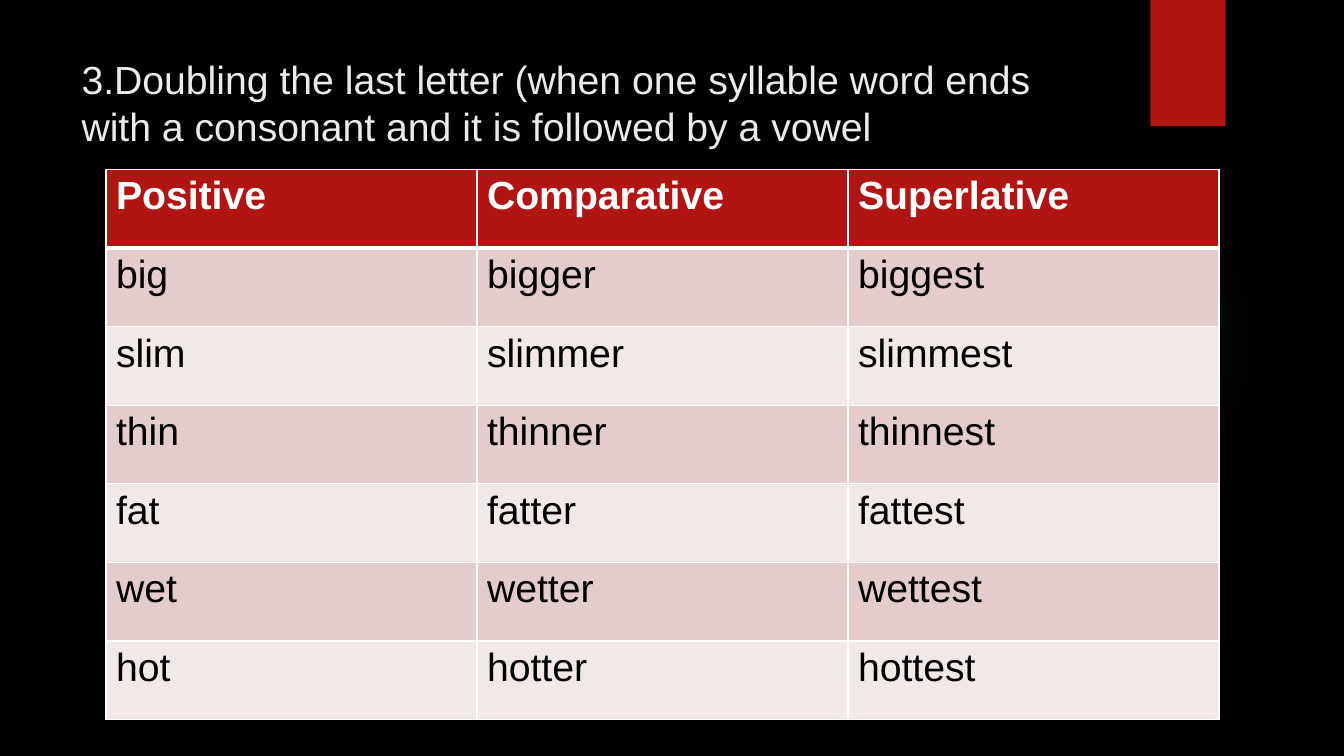
from lxml import etree
from pptx import Presentation
from pptx.dml.color import RGBColor
from pptx.enum.shapes import MSO_SHAPE
from pptx.enum.text import MSO_ANCHOR, MSO_AUTO_SIZE, PP_ALIGN
from pptx.oxml import parse_xml
from pptx.oxml.ns import nsdecls, qn
from pptx.util import Cm, Pt

TITLE = ("3.Doubling the last letter (when one syllable word ends "
         "with a consonant and it is followed by a vowel")
DEGREES = [
    ("Positive", "Comparative", "Superlative"),
    ("big", "bigger", "biggest"),
    ("slim", "slimmer", "slimmest"),
    ("thin", "thinner", "thinnest"),
    ("fat", "fatter", "fattest"),
    ("wet", "wetter", "wettest"),
    ("hot", "hotter", "hottest"),
]
GLOW_STOPS = [(0, 7), (36, 6), (69, 0)]

BLACK = RGBColor(0x00, 0x00, 0x00)
WHITE = RGBColor(0xFF, 0xFF, 0xFF)
RED = RGBColor(0xB0, 0x15, 0x13)
TITLE_GREY = RGBColor(0xEB, 0xEB, 0xEB)
DARK_BAND = RGBColor(0xE4, 0xCC, 0xCC)
LIGHT_BAND = RGBColor(0xF2, 0xE8, 0xE7)
GLOW = RGBColor(0x50, 0xB9, 0xC1)

FONT = "Arial"
TEXT_SIZE = Pt(28)
COLUMN_WIDTH = Cm(9.35)
ROW_HEIGHT = Cm(1.98)
RECTANGLE = MSO_SHAPE.RECTANGLE
OVAL = MSO_SHAPE.OVAL
TOP = MSO_ANCHOR.TOP
NO_AUTOFIT = MSO_AUTO_SIZE.NONE
LEFT = PP_ALIGN.LEFT


def add_plain_shape(slide, kind, left, top, width, height, color):
    shape = slide.shapes.add_shape(kind, Cm(left), Cm(top), Cm(width), Cm(height))
    shape.shadow.inherit = False
    shape.fill.solid()
    shape.fill.fore_color.rgb = color
    shape.line.fill.background()
    return shape


def make_glow(shape):
    stops = "".join(
        f'<a:gs pos="{position * 1000}"><a:srgbClr val="{GLOW}">'
        f'<a:alpha val="{alpha * 1000}"/></a:srgbClr></a:gs>'
        for position, alpha in GLOW_STOPS)
    gradient = parse_xml(
        f'<a:gradFill {nsdecls("a")}><a:gsLst>{stops}</a:gsLst><a:path path="circle">'
        '<a:fillToRect l="50000" t="50000" r="50000" b="50000"/></a:path></a:gradFill>')
    properties = shape.element.spPr
    properties.replace(properties.find(qn("a:solidFill")), gradient)


def format_text(paragraph, color, bold=False):
    paragraph.alignment = LEFT
    paragraph.font.name = FONT
    paragraph.font.size = TEXT_SIZE
    paragraph.font.bold = bold
    paragraph.font.color.rgb = color


def set_borders(cell, top_width, bottom_width):
    properties = cell._tc.get_or_add_tcPr()
    widths = {"a:lnL": 1, "a:lnR": 1, "a:lnT": top_width, "a:lnB": bottom_width}
    for side, width in widths.items():
        line = etree.SubElement(properties, qn(side), w=str(Pt(width)))
        fill = etree.SubElement(line, qn("a:solidFill"))
        etree.SubElement(fill, qn("a:srgbClr"), val=str(WHITE))


def add_degrees_table(slide):
    row_count, column_count = len(DEGREES), len(DEGREES[0])
    table = slide.shapes.add_table(
        row_count, column_count, Cm(2.67), Cm(4.27),
        COLUMN_WIDTH * column_count, ROW_HEIGHT * row_count).table
    for column in table.columns:
        column.width = COLUMN_WIDTH
    for row_index, words in enumerate(DEGREES):
        table.rows[row_index].height = ROW_HEIGHT
        header = row_index == 0
        band = RED if header else DARK_BAND if row_index % 2 else LIGHT_BAND
        for column_index, word in enumerate(words):
            cell = table.cell(row_index, column_index)
            cell.text = word
            format_text(cell.text_frame.paragraphs[0], WHITE if header else BLACK, header)
            set_borders(cell, 3 if row_index == 1 else 1, 3 if header else 1)
            cell.fill.solid()
            cell.fill.fore_color.rgb = band


def main():
    presentation = Presentation()
    presentation.slide_width = Cm(33.87)
    presentation.slide_height = Cm(19.05)
    slide = presentation.slides.add_slide(presentation.slide_layouts[5])
    slide.background.fill.solid()
    slide.background.fill.fore_color.rgb = BLACK

    make_glow(add_plain_shape(slide, OVAL, 23.9, 4.65, 7.82, 7.82, GLOW))
    add_plain_shape(slide, RECTANGLE, 28.99, 0, 1.9, 3.18, RED)

    title = slide.shapes.title
    title.left, title.top, title.width, title.height = Cm(1.8), Cm(1.27), Cm(26.14), Cm(3.89)
    title.text_frame.text = TITLE
    title.text_frame.word_wrap = True
    title.text_frame.auto_size = NO_AUTOFIT
    title.text_frame.vertical_anchor = TOP
    format_text(title.text_frame.paragraphs[0], TITLE_GREY)

    add_degrees_table(slide)
    presentation.save("out.pptx")


if __name__ == "__main__":
    main()
